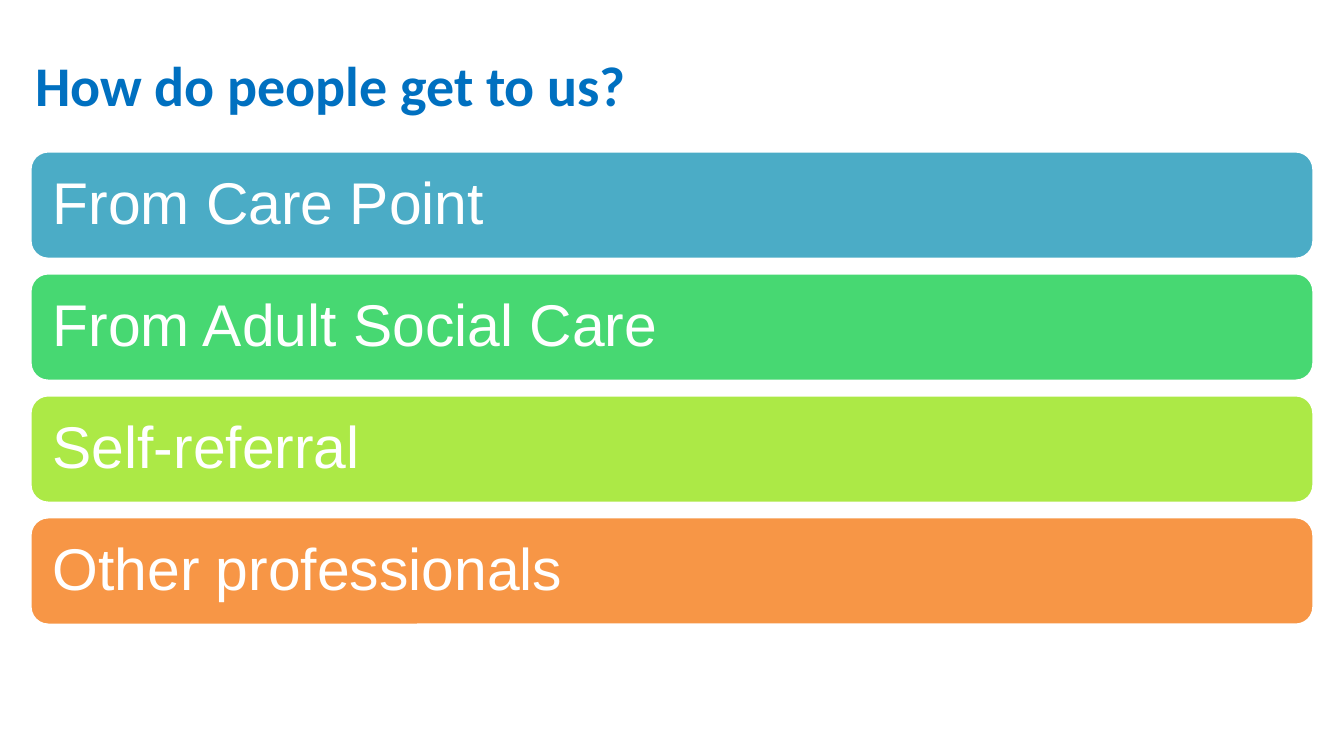
from pptx import Presentation
from pptx import util as u
from pptx.dml.color import RGBColor
from pptx.enum import shapes, text

PX = u.Inches(1) // 100  # 100 px to the inch

ROUTES = [
    ("From Care Point", "4BACC6"),
    ("From Adult Social Care", "47D872"),
    ("Self-referral", "ACE946"),
    ("Other professionals", "F79646"),
]
LEFT, TOP, WIDTH, HEIGHT, PITCH = 30, 150, 1273, 107, 121


def px(*vals):
    return [v * PX for v in vals]


def color(code):
    return RGBColor.from_string(code)


def write(shape, words, inset, tint, fmt):
    """Put one left-aligned line of text in a shape."""
    frame = shape.text_frame
    frame.word_wrap = True
    frame.vertical_anchor = text.MSO_ANCHOR.MIDDLE
    for side in ("left", "top", "right", "bottom"):
        setattr(frame, "margin_" + side, inset * PX)
    para = frame.paragraphs[0]
    para.alignment = text.PP_ALIGN.LEFT
    run = para.add_run()
    run.text = words
    run.font.color.rgb = color(tint)
    for key, val in fmt.items():
        setattr(run.font, key, val)
    return para


def title(slide, words):
    box = slide.shapes.add_textbox(*px(30, 24, 743, 118))
    fmt = {"name": "Calibri", "size": u.Pt(40), "bold": True}
    write(box, words, 5, "0070C0", fmt)


def bar(slide, top, words, fill):
    box = slide.shapes.add_shape(
        shapes.MSO_SHAPE.ROUNDED_RECTANGLE, *px(LEFT, top, WIDTH, HEIGHT))
    box.shadow.inherit = False
    box.fill.solid()
    box.fill.fore_color.rgb = color(fill)
    box.line.color.rgb = color("FFFFFF")
    box.line.width = u.Pt(2)
    fmt = {"name": "Arial", "size": u.Pt(42)}
    para = write(box, words, 17, "FFFFFF", fmt)
    para.line_spacing = 0.9


def main():
    deck = Presentation()
    deck.slide_width, deck.slide_height = px(1333, 750)
    slide = deck.slides.add_slide(deck.slide_layouts[6])

    # Heading
    title(slide, "How do people get to us?")

    # One bar for each route
    for i, (words, fill) in enumerate(ROUTES):
        bar(slide, TOP + i * PITCH, words, fill)

    deck.save("out.pptx")


if __name__ == "__main__":
    main()
